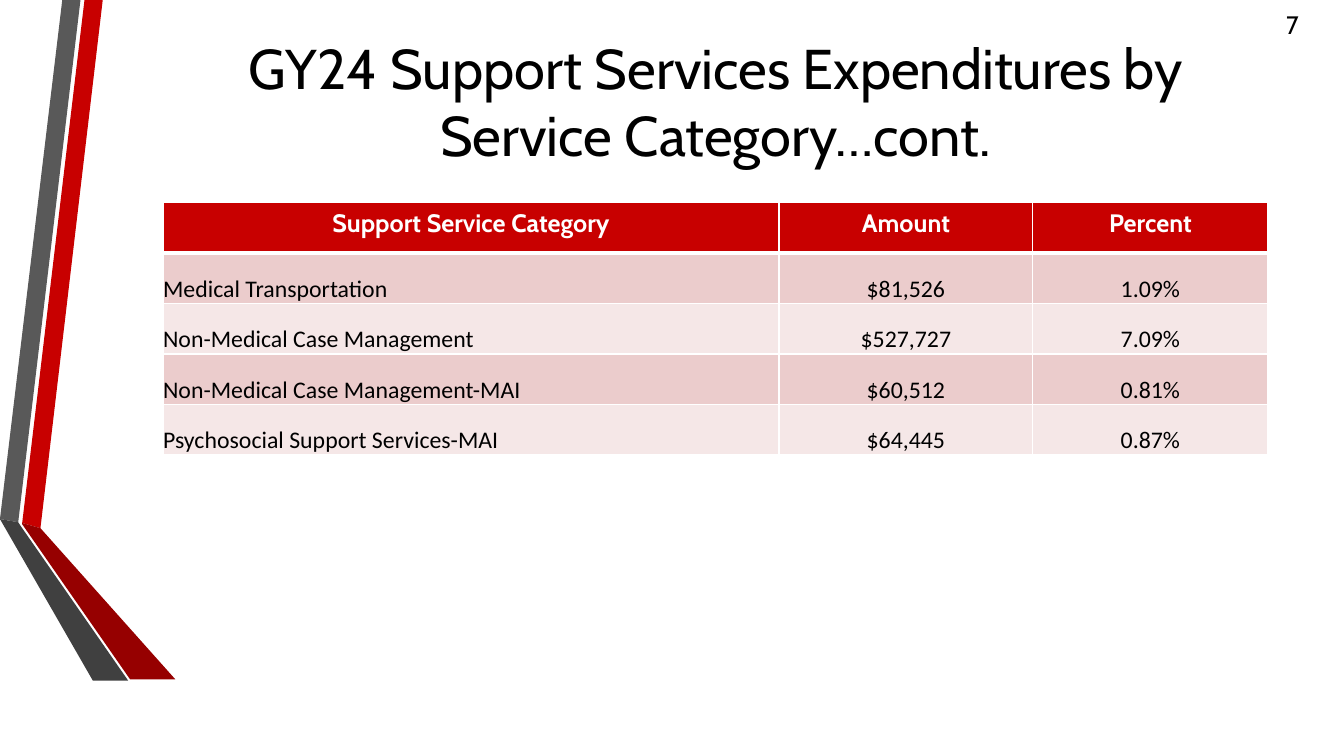
from lxml import etree
from pptx import Presentation
from pptx.dml.color import RGBColor
from pptx.enum import text
from pptx.oxml import ns
from pptx.util import Cm, Pt

TITLE = "GY24 Support Services Expenditures by Service Category…cont."
PAGE_NUMBER = "7"
ROWS = [
    ("Support Service Category", "Amount", "Percent"),
    ("Medical Transportation", "$81,526", "1.09%"),
    ("Non-Medical Case Management", "$527,727", "7.09%"),
    ("Non-Medical Case Management-MAI", "$60,512", "0.81%"),
    ("Psychosocial Support Services-MAI", "$64,445", "0.87%"),
]
RIBBONS = [
    ("C80000", [(0.56, 13.18), (1.02, 13.31), (2.59, 0), (2.13, 0)]),
    ("595959", [(2.03, 0), (1.57, 0), (0, 13.08), (0.46, 13.16)]),
    ("960000", [(0.56, 13.18), (0.56, 13.21), (3.28, 17.12), (4.42, 17.12), (1.02, 13.31)]),
    ("404040", [(3.23, 17.15), (0.56, 13.31), (0.46, 13.16), (0, 13.08), (2.34, 17.15)]),
]
COLUMN_WIDTHS = [15.52, 6.4, 5.92]
ROW_HEIGHT = 1.27
LEFT, TABLE_TOP = 4.11, 5.11
BAND_FILLS = ["F5E7E7", "EBCCCC"]
TITLE_FONT = {"name": "Cabin", "size": Pt(40), "bold": False}
NUMBER_FONT = {"name": "Cabin", "size": Pt(18)}
HEADER_FONT = {"name": "Cabin", "size": Pt(18), "bold": True}
BODY_FONT = {"name": "Calibri", "size": Pt(17), "bold": False}
BODY_CELL = {
    "margin_left": 0, "margin_top": 0, "margin_right": 0, "margin_bottom": 0,
    "vertical_anchor": text.MSO_ANCHOR.BOTTOM,
}


def colour(value):
    return RGBColor.from_string(value)


def apply(target, values):
    for name, value in values.items():
        setattr(target, name, value)


def write(frame, words, font, font_colour, alignment):
    frame.text = words
    paragraph = frame.paragraphs[0]
    paragraph.alignment = alignment
    apply(paragraph.font, font)
    paragraph.font.color.rgb = colour(font_colour)


def add_borders(cell, top, bottom):
    properties = cell._tc.get_or_add_tcPr()
    for side, points in zip("LRTB", (1, 1, top, bottom)):
        line = etree.SubElement(properties, ns.qn(f"a:ln{side}"), w=str(Pt(points)))
        fill = etree.SubElement(line, ns.qn("a:solidFill"))
        etree.SubElement(fill, ns.qn("a:srgbClr"), val="FFFFFF")


def add_ribbon(slide, fill, points):
    corners = [(Cm(x), Cm(y)) for x, y in points]
    builder = slide.shapes.build_freeform(*corners[0])
    builder.add_line_segments(corners[1:], close=True)
    shape = builder.convert_to_shape()
    shape.shadow.inherit = False
    shape.fill.solid()
    shape.fill.fore_color.rgb = colour(fill)
    shape.line.fill.background()


def add_page_number(slide):
    box = slide.shapes.add_textbox(Cm(32.16), Cm(0.1), Cm(1.7), Cm(1.02))
    box.text_frame.word_wrap = True
    write(box.text_frame, PAGE_NUMBER, NUMBER_FONT, "000000", text.PP_ALIGN.LEFT)


def add_title(slide):
    title = slide.shapes.title
    apply(title, {"left": Cm(LEFT), "top": Cm(0.1),
                  "width": Cm(sum(COLUMN_WIDTHS)), "height": Cm(4.88)})
    apply(title.text_frame, {"word_wrap": True, "auto_size": text.MSO_AUTO_SIZE.NONE,
                             "vertical_anchor": text.MSO_ANCHOR.MIDDLE})
    write(title.text_frame, TITLE, TITLE_FONT, "000000", text.PP_ALIGN.CENTER)


def add_expenditure_table(slide):
    table = slide.shapes.add_table(
        len(ROWS), len(COLUMN_WIDTHS), Cm(LEFT), Cm(TABLE_TOP),
        Cm(sum(COLUMN_WIDTHS)), Cm(ROW_HEIGHT * len(ROWS))).table
    table.horz_banding = False
    for column, width in zip(table.columns, COLUMN_WIDTHS):
        column.width = Cm(width)
    for row, values in enumerate(ROWS):
        table.rows[row].height = Cm(ROW_HEIGHT)
        header = row == 0
        for column, words in enumerate(values):
            cell = table.cell(row, column)
            add_borders(cell, 3 if row == 1 else 1, 3 if header else 1)
            cell.fill.solid()
            cell.fill.fore_color.rgb = colour("C80000" if header else BAND_FILLS[row % 2])
            if not header:
                apply(cell, BODY_CELL)
            centred = header or column > 0
            write(cell.text_frame, words,
                  HEADER_FONT if header else BODY_FONT,
                  "FFFFFF" if header else "000000",
                  text.PP_ALIGN.CENTER if centred else text.PP_ALIGN.LEFT)


def main():
    presentation = Presentation()
    apply(presentation, {"slide_width": Cm(33.87), "slide_height": Cm(19.05)})
    slide = presentation.slides.add_slide(presentation.slide_layouts[5])
    for fill, points in RIBBONS:
        add_ribbon(slide, fill, points)
    add_page_number(slide)
    add_title(slide)
    add_expenditure_table(slide)
    presentation.save("out.pptx")


if __name__ == "__main__":
    main()
